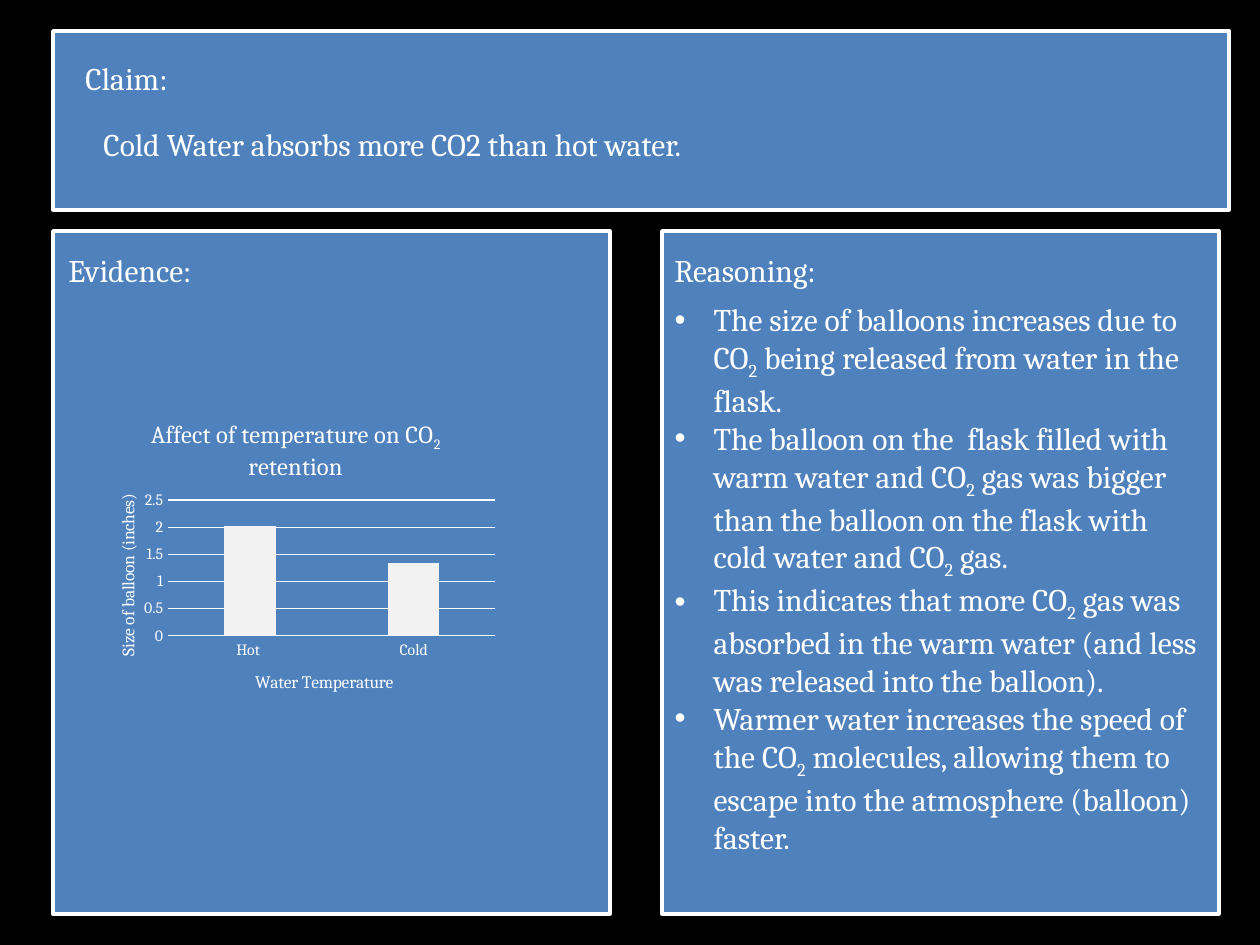
from dataclasses import dataclass

from lxml import etree
from pptx import Presentation
from pptx.chart.data import CategoryChartData
from pptx.dml.color import RGBColor
from pptx.enum.chart import XL_CHART_TYPE, XL_TICK_MARK
from pptx.enum.shapes import MSO_SHAPE
from pptx.enum.text import MSO_ANCHOR, MSO_AUTO_SIZE, PP_ALIGN
from pptx.oxml.ns import qn
from pptx.util import Emu, Pt

RECTANGLE = MSO_SHAPE.RECTANGLE
COLUMNS = XL_CHART_TYPE.COLUMN_CLUSTERED
NO_TICKS = XL_TICK_MARK.NONE
TOP = MSO_ANCHOR.TOP
NO_FIT = MSO_AUTO_SIZE.NONE
LEFT = PP_ALIGN.LEFT


@dataclass(frozen=True)
class Theme:
    background: RGBColor = RGBColor(0x00, 0x00, 0x00)
    panel: RGBColor = RGBColor(0x4F, 0x81, 0xBD)
    text: RGBColor = RGBColor(0xFF, 0xFF, 0xFF)
    column: RGBColor = RGBColor(0xF2, 0xF2, 0xF2)
    font: str = "Cambria"
    body_size: int = 18
    chart_title_size: int = 14
    axis_title_size: int = 10
    axis_size: int = 9
    border: int = 2
    hairline: float = 0.75


THEME = Theme()
SUBSCRIPT_MARK = "|"  # stands for a subscript 2
REASONS = (
    "The size of balloons increases due to CO| being released from water in the flask.",
    "The balloon on the  flask filled with warm water and CO| gas was bigger than "
    "the balloon on the flask with cold water and CO| gas.",
    "This indicates that more CO| gas was absorbed in the warm water "
    "(and less was released into the balloon).",
    "Warmer water increases the speed of the CO| molecules, allowing them to escape "
    "into the atmosphere (balloon) faster.",
)


def px(length):
    return Emu(round(length * 914400 / 126))


def place(shape, left, top, width, height):
    shape.left, shape.top = px(left), px(top)
    shape.width, shape.height = px(width), px(height)


def style_font(font, size):
    font.name, font.size, font.bold = THEME.font, Pt(size), False
    font.color.rgb = THEME.text


def add_runs(paragraph, text, size=THEME.body_size):
    for index, piece in enumerate(text.split(SUBSCRIPT_MARK)):
        if index:
            subscript = paragraph.add_run()
            subscript.text = "2"
            style_font(subscript.font, size)
            subscript.font._element.set("baseline", "-25000")
        run = paragraph.add_run()
        run.text = piece
        style_font(run.font, size)


def fill_text(shape, lines, indent=0):
    frame = shape.text_frame
    frame.word_wrap, frame.auto_size = True, NO_FIT
    frame.vertical_anchor = TOP
    for index, line in enumerate(lines):
        paragraph = frame.add_paragraph() if index else frame.paragraphs[0]
        if indent:
            properties = paragraph._p.get_or_add_pPr()
            properties.set("marL", str(px(indent)))
            properties.set("indent", str(-px(indent)))
        paragraph.alignment, paragraph.space_before = LEFT, Pt(0)
        add_runs(paragraph, line)


def add_panel(slide, left, top, width, height):
    panel = slide.shapes.add_shape(RECTANGLE, px(left), px(top), px(width), px(height))
    panel.shadow.inherit = False
    panel.fill.solid()
    panel.fill.fore_color.rgb = THEME.panel
    panel.line.color.rgb, panel.line.width = THEME.text, Pt(THEME.border)


def add_label(slide, text, left, top):
    label = slide.shapes.add_textbox(px(left), px(top), px(200), px(50))
    fill_text(label, [text])


def use_placeholder(slide, placeholder, box, lines, indent=0):
    place(placeholder, *box)
    fill_text(placeholder, lines, indent)
    slide.shapes._spTree.append(placeholder._element)  # in front of its panel


def set_layout(parent, index, **fractions):
    """Give a chart part a fixed place, as fractions of the chart."""
    for old in parent.findall(qn("c:layout")):
        parent.remove(old)
    layout = etree.Element(qn("c:layout"))
    manual = etree.SubElement(layout, qn("c:manualLayout"))
    if "w" in fractions:
        etree.SubElement(manual, qn("c:layoutTarget")).set("val", "inner")
    for mode in ("xMode", "yMode"):
        etree.SubElement(manual, qn(f"c:{mode}")).set("val", "edge")
    for name, value in fractions.items():
        etree.SubElement(manual, qn(f"c:{name}")).set("val", str(value))
    parent.insert(index, layout)


def set_title(title, text, size, x, y):
    add_runs(title.text_frame.paragraphs[0], text, size)
    set_layout(title._element, 1, x=x, y=y)


def style_axis(axis, title, x, y):
    axis.major_tick_mark = axis.minor_tick_mark = NO_TICKS
    style_font(axis.tick_labels.font, THEME.axis_size)
    set_title(axis.axis_title, title, THEME.axis_title_size, x, y)


def add_balloon_chart(slide, left, top, width, height):
    data = CategoryChartData()
    data.categories = ["Hot ", "Cold"]
    data.add_series("Series 1", [2.02, 1.34])
    chart = slide.shapes.add_chart(
        COLUMNS, px(left), px(top), px(width), px(height), data).chart
    style_font(chart.font, THEME.axis_title_size)
    chart.has_legend = False
    set_title(chart.chart_title, "Affect of temperature on CO| retention",
              THEME.chart_title_size, 0.15, 0.05)
    set_layout(chart._chartSpace.chart.plotArea, 0, x=0.2, y=0.32, w=0.78, h=0.43)

    # Columns
    plot = chart.plots[0]
    plot.gap_width, plot.overlap, plot.vary_by_categories = 219, -27, False
    column_fill = plot.series[0].format.fill
    column_fill.solid()
    column_fill.fore_color.rgb = THEME.column

    # Axes
    categories, values = chart.category_axis, chart.value_axis
    style_axis(categories, "Water Temperature", 0.4, 0.85)
    style_axis(values, "Size of balloon (inches)", 0.07, 0.29)
    body = values.axis_title.text_frame._txBody.bodyPr
    body.set("rot", "-5400000")
    body.set("vert", "horz")
    values.minimum_scale, values.maximum_scale, values.major_unit = 0, 2.5, 0.5
    values.format.line.fill.background()
    for line in (categories.format.line, values.major_gridlines.format.line):
        line.color.rgb, line.width = THEME.text, Pt(THEME.hairline)


def add_claim(slide, left, top, width, height):
    add_panel(slide, left, top, width, height)
    add_label(slide, "Claim:", left + 20, top + 22)
    use_placeholder(slide, slide.shapes.title, (left + 31, top + 88, 1092, 50),
                    [" Cold Water absorbs more CO2 than hot water."])


def add_evidence(slide, left, top, width, height):
    add_panel(slide, left, top, width, height)
    add_label(slide, "Evidence:", left + 3, top + 14)
    add_balloon_chart(slide, left + 31, top + 168, 420, 316)


def add_reasoning(slide, left, top, width, height):
    add_panel(slide, left, top, width, height)
    add_label(slide, "Reasoning:", left, top + 14)
    use_placeholder(slide, slide.placeholders[1], (left, top + 63, width, 585),
                    REASONS, indent=39)


def main():
    presentation = Presentation()
    presentation.slide_width, presentation.slide_height = px(1260), px(945)
    slide = presentation.slides.add_slide(presentation.slide_layouts[1])
    slide.background.fill.solid()
    slide.background.fill.fore_color.rgb = THEME.background
    add_claim(slide, 53, 31, 1176, 179)
    add_evidence(slide, 53, 231, 557, 683)
    add_reasoning(slide, 662, 231, 557, 683)
    presentation.save("out.pptx")


if __name__ == "__main__":
    main()
